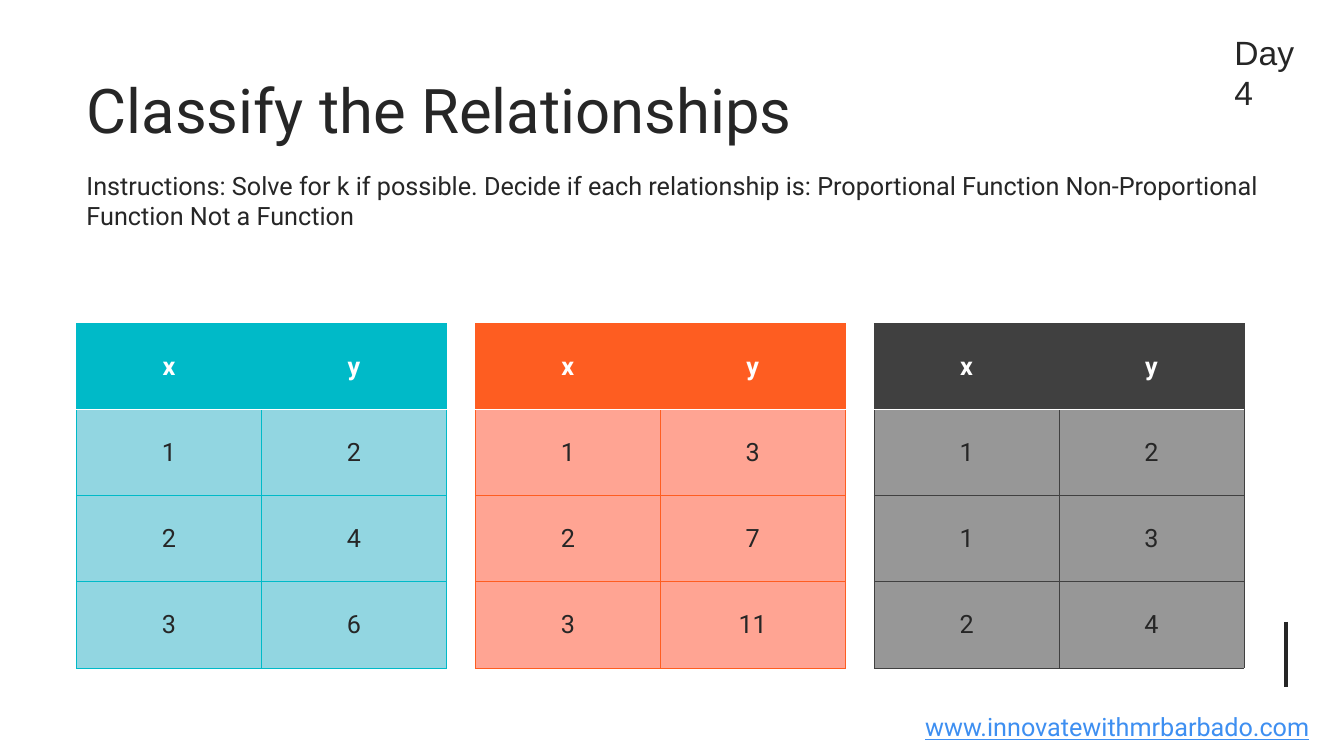
from pptx import Presentation
from pptx.dml.color import RGBColor
from pptx.enum.shapes import MSO_CONNECTOR
from pptx.enum.text import MSO_ANCHOR, MSO_AUTO_SIZE, PP_ALIGN
from pptx.oxml.ns import qn
from pptx.util import Cm, Pt
from lxml.etree import SubElement

WHITE = RGBColor(0xFF, 0xFF, 0xFF)
INK = RGBColor(0x26, 0x26, 0x26)
LINK = RGBColor(0x3E, 0x8F, 0xF1)
TEAL = RGBColor(0x00, 0xBA, 0xC8)
TEAL_LIGHT = RGBColor(0x92, 0xD6, 0xE1)
ORANGE = RGBColor(0xFE, 0x5D, 0x21)
ORANGE_LIGHT = RGBColor(0xFF, 0xA4, 0x93)
GREY = RGBColor(0x40, 0x40, 0x40)
GREY_LIGHT = RGBColor(0x97, 0x97, 0x97)

BODY = {"name": "Roboto", "size": Pt(18), "bold": False}
TABLE_LEFT, TABLE_TOP, TABLE_PITCH = 1.93, 8.15, 10.05
COL_WIDTH, ROW_HEIGHT = 4.66, 2.17

# Accent, light fill and (x, y) pairs of each relationship
RELATIONSHIPS = [
    (TEAL, TEAL_LIGHT, [(1, 2), (2, 4), (3, 6)]),
    (ORANGE, ORANGE_LIGHT, [(1, 3), (2, 7), (3, 11)]),
    (GREY, GREY_LIGHT, [(1, 2), (1, 3), (2, 4)]),
]


def write(tf, text, color, align=PP_ALIGN.LEFT, **changes):
    p = tf.paragraphs[0]
    p.alignment = align
    r = p.add_run()
    r.text = text
    for key, value in {**BODY, **changes}.items():
        setattr(r.font, key, value)
    r.font.color.rgb = color


def add_text(s, box, text, color, wrap=True, **changes):
    tf = s.shapes.add_textbox(*map(Cm, box)).text_frame
    tf.word_wrap = wrap
    write(tf, text, color, **changes)


def add_border(cell, side, color, width):
    ln = SubElement(cell._tc.get_or_add_tcPr(), qn(f"a:ln{side}"), w=str(Pt(width)))
    fill = SubElement(ln, qn("a:solidFill"))
    SubElement(fill, qn("a:srgbClr"), val=str(color))


def add_relationship(s, left, accent, light, pairs):
    rows = [("x", "y"), *pairs]
    frame = s.shapes.add_table(len(rows), 2, Cm(left), Cm(TABLE_TOP),
                               Cm(2 * COL_WIDTH), Cm(len(rows) * ROW_HEIGHT))
    table = frame.table
    for col in table.columns:
        col.width = Cm(COL_WIDTH)
    for i, values in enumerate(rows):
        table.rows[i].height = Cm(ROW_HEIGHT)
        header = i == 0
        for j, value in enumerate(values):
            cell = table.cell(i, j)
            cell.vertical_anchor = MSO_ANCHOR.MIDDLE
            # A white rule separates the header from the values
            white_sides = {0: "B", 1: "T"}.get(i, "")
            for side in "LRTB":
                white = side == white_sides
                add_border(cell, side, WHITE if white else accent, 1 if white else 0.5)
            cell.fill.solid()
            cell.fill.fore_color.rgb = accent if header else light
            write(cell.text_frame, str(value), WHITE if header else INK,
                  PP_ALIGN.CENTER, bold=header)


def add_rule(s, x, top, bottom):
    line = s.shapes.add_connector(MSO_CONNECTOR.STRAIGHT, Cm(x), Cm(top), Cm(x), Cm(bottom))
    line.line.color.rgb = INK
    line.line.width = Pt(3)
    SubElement(line._element.spPr, qn("a:effectLst"))


def add_title(s, box, text):
    title = s.shapes.title
    title.left, title.top, title.width, title.height = map(Cm, box)
    tf = title.text_frame
    tf.auto_size = MSO_AUTO_SIZE.NONE
    tf.vertical_anchor = MSO_ANCHOR.MIDDLE
    write(tf, text, INK, size=Pt(44))


def main():
    prs = Presentation()
    prs.slide_width, prs.slide_height = Cm(33.87), Cm(19.05)
    s = prs.slides.add_slide(prs.slide_layouts[5])
    s.background.fill.solid()
    s.background.fill.fore_color.rgb = WHITE

    # Heading and instructions
    add_rule(s, 32.41, 15.67, 17.32)
    add_title(s, (1.93, 0.76, 28.83, 3.99), "Classify the Relationships")
    add_text(s, (1.93, 4.17, 30.63, 1.8),
             "Instructions: Solve for k if possible. Decide if each relationship is: "
             "Proportional Function Non-Proportional Function Not a Function", INK)

    # Tables
    for i, relationship in enumerate(RELATIONSHIPS):
        add_relationship(s, TABLE_LEFT + i * TABLE_PITCH, *relationship)

    # Day and web address
    add_text(s, (30.86, 0.68, 2.62, 1.5), "Day 4", INK, name="Arial", size=Pt(24))
    add_text(s, (23.04, 17.81, 10.24, 1.02), "www.innovatewithmrbarbado.com", LINK,
             wrap=False, align=PP_ALIGN.CENTER, underline=True)
    prs.save("out.pptx")


if __name__ == "__main__":
    main()
